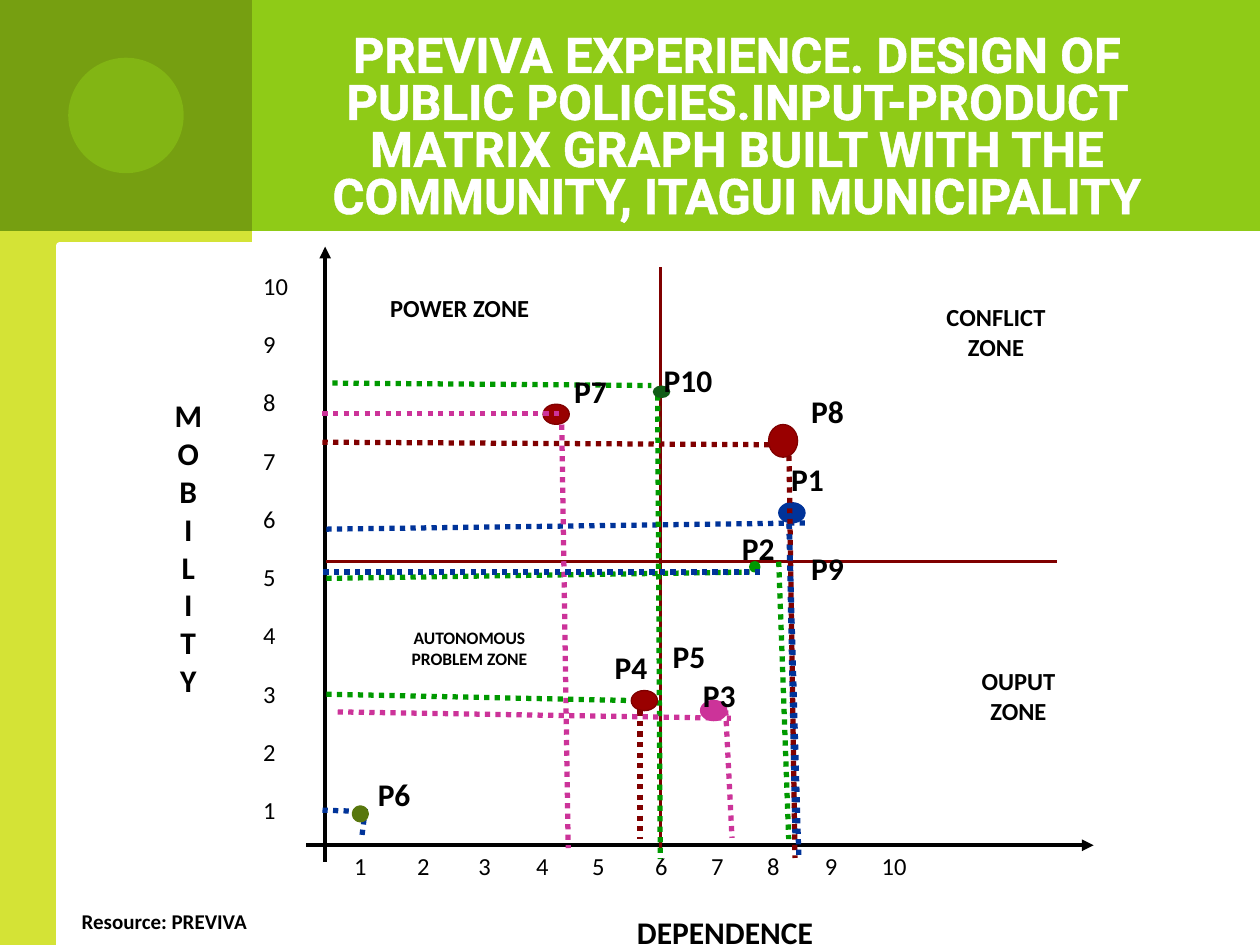
from lxml import etree
from pptx import Presentation
from pptx import util as u
from pptx.dml import color
from pptx.enum import dml, shapes, text
from pptx.oxml.ns import qn

Pt = u.Pt
rgb = color.RGBColor.from_string
RECTANGLE, OVAL = shapes.MSO_SHAPE.RECTANGLE, shapes.MSO_SHAPE.OVAL
LEFT, CENTER = text.PP_ALIGN.LEFT, text.PP_ALIGN.CENTER
TOP, MIDDLE = text.MSO_ANCHOR.TOP, text.MSO_ANCHOR.MIDDLE
RED, MAROON, BLUE, GREEN, PINK = "990000", "800000", "003399", "009900", "CC3399"

presentation = Presentation()
presentation.slide_width, presentation.slide_height = Pt(720), Pt(540)
slide = presentation.slides.add_slide(presentation.slide_layouts[5])


def add_shape(kind, box, fill, line=None, line_width=0.75):
    shape = slide.shapes.add_shape(kind, *map(Pt, box))
    shape.shadow.inherit = False
    shape.fill.solid()
    shape.fill.fore_color.rgb = rgb(fill)
    if line:
        shape.line.color.rgb = rgb(line)
        shape.line.width = Pt(line_width)
    else:
        shape.line.fill.background()
    return shape


def add_line(ends, line_color, width, dotted=False, arrow=False):
    line = slide.shapes.add_connector(shapes.MSO_CONNECTOR.STRAIGHT, *map(Pt, ends))
    line.line.color.rgb = rgb(line_color)
    line.line.width = Pt(width)
    if dotted:
        line.line.dash_style = dml.MSO_LINE.ROUND_DOT
    properties = line._element.spPr
    if arrow:
        etree.SubElement(properties.find(qn("a:ln")), qn("a:tailEnd"), type="triangle")
    etree.SubElement(properties, qn("a:effectLst"))


# Header band, side band and white panel
add_shape(RECTANGLE, (36, 0, 684, 132), "8FCB17")
add_shape(RECTANGLE, (0, 0, 144, 540), "D4E336")
add_shape(RECTANGLE, (0, 0, 144, 132), "769F11")
disc = add_shape(OVAL, (39, 33, 66, 66), "8FCB17")
disc_color = disc._element.spPr.find(qn("a:solidFill"))[0]
etree.SubElement(disc_color, qn("a:alpha"), val="50000")
add_shape(RECTANGLE, (34, 140.5, 664, 399.5), "FFFFFF", "FFFFFF", 4)

# Axes and zone borders
add_line((185.8, 492.5, 185.8, 141), "000000", 2.25, arrow=True)
add_line((175, 483, 625, 483), "000000", 2.25, arrow=True)
add_line((377.3, 484.6, 377.3, 152.6), MAROON, 1.5)
add_line((186.5, 321, 604, 321), MAROON, 1.5)

# Problem dots behind the guides: P7, P1, P2, P3
for box, fill, line in [
    ((310.3, 231, 15, 11.5), RED, MAROON),
    ((445, 287.3, 15, 11.5), BLUE, BLUE),
    ((428.4, 321, 5.8, 5.8), GREEN, GREEN),
    ((400.3, 400.3, 15, 11.5), PINK, PINK),
]:
    add_shape(OVAL, box, fill, line)

# Dotted guides from the dots to the axes
guides = [
    (MAROON, [(184.3, 252.7, 450.7, 254.2), (365.8, 406, 365.8, 479.5)]),
    (BLUE, [(186.5, 302.4, 462.2, 298.8), (450.7, 293, 454.3, 478.8)]),
    (GREEN, [(186.5, 330.5, 428.4, 326.9), (445, 321, 450.7, 479.5)]),
    (PINK, [(184.3, 236.2, 320.4, 236.2), (414.7, 406, 418.3, 478.8)]),
    (GREEN, [(375.8, 226, 377.3, 491), (190, 218.9, 372.2, 220.3)]),
    (BLUE, [(184.3, 463, 208.8, 463.7), (208.8, 462.2, 206.6, 479.5)]),
    (PINK, [(321, 242.6, 324.7, 484.6), (193, 406.8, 417.6, 410.4)]),
    (MAROON, [(450.7, 248.4, 454.3, 490.3)]),
    (GREEN, [(186.5, 396.7, 360, 400.3)]),
    (BLUE, [(450.7, 287.3, 456.5, 490.3), (434.2, 326.9, 184.3, 326.9)]),
]
for guide_color, lines in guides:
    for ends in lines:
        add_line(ends, guide_color, 3, dotted=True)

# Problem dots in front of the guides: P4, P10, P8, P6
for box, fill, line, width in [
    ((360.7, 394.6, 15, 11.5), RED, MAROON, 0.75),
    ((373, 220.3, 10, 7.2), "115D16", None, 0),
    ((439.2, 242.6, 16.6, 18.7), RED, MAROON, 0.75),
    ((203, 462.2, 5.8, 5.8), "58770D", "58770D", 4),
]:
    add_shape(OVAL, box, fill, line, width)

# Texts: wording, box, size, bold, alignment, anchor
x_numbers = "".join(f"\t{number}" for number in range(1, 11))
y_numbers = "\n".join(str(number) for number in range(10, 0, -1))
labels = [
    (x_numbers, (185.8, 483, 439, 24), 14, False, LEFT, TOP),
    (y_numbers, (143.3, 151.2, 43, 330), 14, False, LEFT, TOP),
    ("POWER ZONE", (214.5, 164, 96.5, 41), 14, True, CENTER, TOP),
    ("CONFLICT\nZONE", (490.3, 169.2, 157.7, 41), 14, True, CENTER, TOP),
    ("OUPUT\nZONE", (507, 377.3, 150, 41), 14, True, CENTER, TOP),
    ("AUTONOMOUS PROBLEM ZONE", (220.3, 355, 95.8, 31.7), 10, True, CENTER, TOP),
    ("MOBILITY", (90.7, 175, 33.8, 275.8), 18, True, CENTER, MIDDLE),
    ("DEPENDENCE", (226, 512.6, 376.6, 39.6), 18, True, CENTER, MIDDLE),
    ("Resource: PREVIVA", (39.6, 515.5, 208, 21.6), 12, True, LEFT, TOP),
]
problem_places = {
    "P1": (445, 259.2), "P2": (416.9, 298.8), "P3": (394.6, 383), "P4": (344.2, 366.5),
    "P5": (377.3, 360.7), "P6": (208.8, 439.2), "P7": (321, 208.8), "P8": (456.5, 220.3),
    "P9": (456.5, 310.3), "P10": (372.2, 203),
}
for name, place in problem_places.items():
    labels.append((name, (*place, 52, 28.8), 18, True, LEFT, TOP))

for wording, box, size, bold, alignment, anchor in labels:
    frame = slide.shapes.add_textbox(*map(Pt, box)).text_frame
    frame.word_wrap = True
    frame.vertical_anchor = anchor
    frame.text = wording
    for paragraph in frame.paragraphs:
        paragraph.alignment = alignment
        paragraph.font.name = "Calibri"
        paragraph.font.size = Pt(size)
        paragraph.font.bold = bold
        paragraph.font.color.rgb = rgb("000000")
        if wording == y_numbers:
            paragraph.space_after = Pt(16.5)
    if wording == x_numbers:
        tabs = etree.Element(qn("a:tabLst"))
        for position in (13, 49, 84, 117, 149, 185, 217, 249, 282, 318):
            etree.SubElement(tabs, qn("a:tab"), pos=str(Pt(position)), algn="ctr")
        frame.paragraphs[0]._p.pPr.insert(0, tabs)
    if wording == "MOBILITY":
        frame._txBody.bodyPr.set("vert", "wordArtVert")

# Title, brought in front of the header band
title = slide.shapes.title
slide.shapes._spTree.append(title._element)
title.left, title.top, title.width, title.height = map(Pt, (146, 16.5, 550, 90))
frame = title.text_frame
frame.text = ("PREVIVA EXPERIENCE. DESIGN OF PUBLIC POLICIES.INPUT-PRODUCT "
              "MATRIX GRAPH BUILT WITH THE COMMUNITY, ITAGUI MUNICIPALITY")
frame.word_wrap = True
frame.auto_size = text.MSO_AUTO_SIZE.NONE
frame.vertical_anchor = TOP
paragraph = frame.paragraphs[0]
paragraph.alignment = CENTER
paragraph.line_spacing = 0.8
paragraph.font.name = "Roboto"
paragraph.font.size = Pt(28)
paragraph.font.bold = True
paragraph.font.color.rgb = rgb("FFFFFF")
outline = etree.Element(qn("a:ln"), w=str(Pt(1.42)))
outline_fill = etree.SubElement(outline, qn("a:solidFill"))
etree.SubElement(outline_fill, qn("a:srgbClr"), val="FFFFFF")
paragraph.runs[0]._r.get_or_add_rPr().insert(0, outline)

presentation.save("out.pptx")
